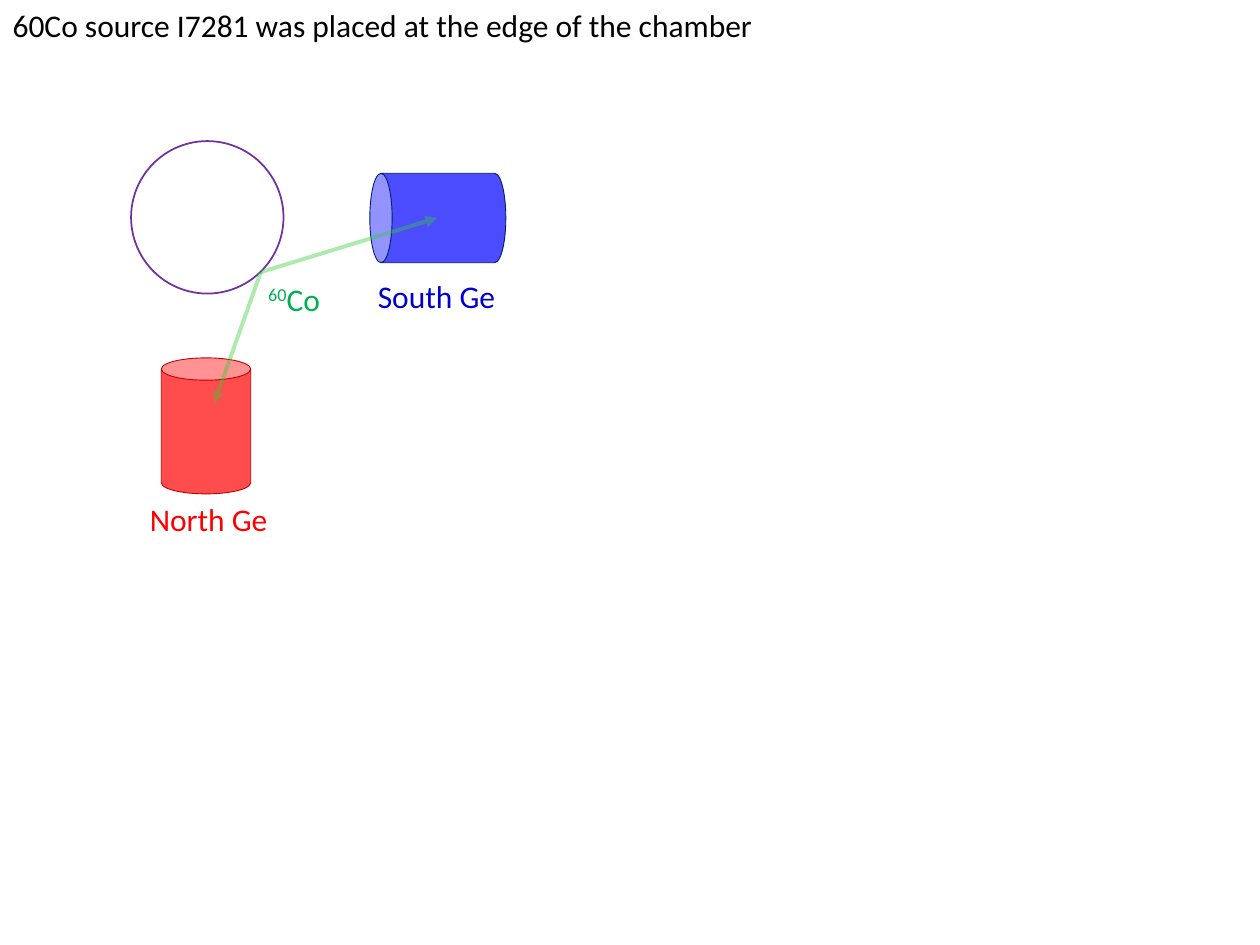
from lxml.etree import SubElement
from pptx import Presentation
from pptx.dml.color import RGBColor
from pptx.enum.shapes import MSO_CONNECTOR, MSO_SHAPE
from pptx.enum.text import MSO_ANCHOR, MSO_AUTO_SIZE, PP_ALIGN
from pptx.oxml.ns import qn
from pptx.util import Inches, Pt

BLACK = RGBColor(0x00, 0x00, 0x00)
PURPLE = RGBColor(0x70, 0x30, 0xA0)
RED = RGBColor(0xFF, 0x00, 0x00)
DARK_RED = RGBColor(0xC0, 0x00, 0x00)
BLUE = RGBColor(0x00, 0x00, 0xFF)
LABEL_BLUE = RGBColor(0x00, 0x00, 0xCC)
NAVY = RGBColor(0x00, 0x20, 0x60)
GREEN = RGBColor(0x00, 0xB0, 0x50)
RAY_GREEN = RGBColor(0x33, 0xCC, 0x33)

# Content: positions in inches
TITLE = "60Co source I7281 was placed at the edge of the chamber"
CHAMBER = (1.04, 1.12, 1.21, 1.21)
DETECTOR_SIZE = (0.71, 1.08)
DETECTORS = [  # left, top, rotation, fill, outline
    (1.28, 2.84, 0, RED, DARK_RED),
    (3.12, 1.19, 270, BLUE, NAVY),
]
SOURCE = (2.07, 2.16)
RAY_ENDS = [(3.47, 1.73), (1.70, 3.20)]
LABELS = [  # left, top, width, superscript, text, colour
    (2.03, 2.17, 0.64, "60", "Co", GREEN),
    (2.90, 2.15, 1.15, "", "South Ge", LABEL_BLUE),
    (1.09, 3.92, 1.15, "", "North Ge", RED),
]
TEXT_HEIGHT = 0.4


def set_alpha(properties, percent):
    """Make the solid colour inside a shape's or line's properties see-through."""
    color = properties.find(qn("a:solidFill"))[0]
    SubElement(color, qn("a:alpha"), val=str(percent * 1000))


def add_outlined(slide, kind, box, color, width):
    shape = slide.shapes.add_shape(kind, *map(Inches, box))
    shape.shadow.inherit = False
    shape.fill.background()
    shape.line.color.rgb = color
    shape.line.width = Pt(width)
    return shape


def add_ray(slide, start, end):
    ray = slide.shapes.add_connector(
        MSO_CONNECTOR.STRAIGHT, *map(Inches, start + end))
    ray.line.color.rgb = RAY_GREEN
    ray.line.width = Pt(2.25)
    properties = ray._element.spPr
    line = properties.find(qn("a:ln"))
    set_alpha(line, 40)
    SubElement(line, qn("a:tailEnd"), type="triangle")
    SubElement(properties, qn("a:effectLst"))


def style_text(shape, color, wrap):
    frame = shape.text_frame
    frame.word_wrap = wrap
    frame.auto_size = MSO_AUTO_SIZE.NONE
    frame.vertical_anchor = MSO_ANCHOR.TOP
    paragraph = frame.paragraphs[0]
    paragraph.alignment = PP_ALIGN.LEFT
    paragraph.line_spacing = 1.0
    paragraph.font.name = "Calibri"
    paragraph.font.size = Pt(18)
    paragraph.font.color.rgb = color
    return paragraph


presentation = Presentation()
presentation.slide_width, presentation.slide_height = Inches(10), Inches(7.5)
slide = presentation.slides.add_slide(presentation.slide_layouts[5])

# Chamber and detectors
add_outlined(slide, MSO_SHAPE.OVAL, CHAMBER, PURPLE, 1)
for left, top, rotation, fill, outline in DETECTORS:
    detector = add_outlined(
        slide, MSO_SHAPE.CAN, (left, top, *DETECTOR_SIZE), outline, 0.5)
    detector.rotation = rotation
    detector.fill.solid()
    detector.fill.fore_color.rgb = fill
    set_alpha(detector._element.spPr, 70)

# Rays from the source to each detector
for end in RAY_ENDS:
    add_ray(slide, SOURCE, end)

# Labels
for left, top, width, superscript, text, color in LABELS:
    label = slide.shapes.add_textbox(
        *map(Inches, (left, top, width, TEXT_HEIGHT)))
    paragraph = style_text(label, color, True)
    if superscript:
        run = paragraph.add_run()
        run.text = superscript
        run.font._element.set("baseline", "30000")
    paragraph.add_run().text = text

# Title
title = slide.shapes.title
title.left, title.top = Inches(0), Inches(0)
title.width, title.height = Inches(6.21), Inches(TEXT_HEIGHT)
title.text_frame.text = TITLE
style_text(title, BLACK, False)

presentation.save("out.pptx")
